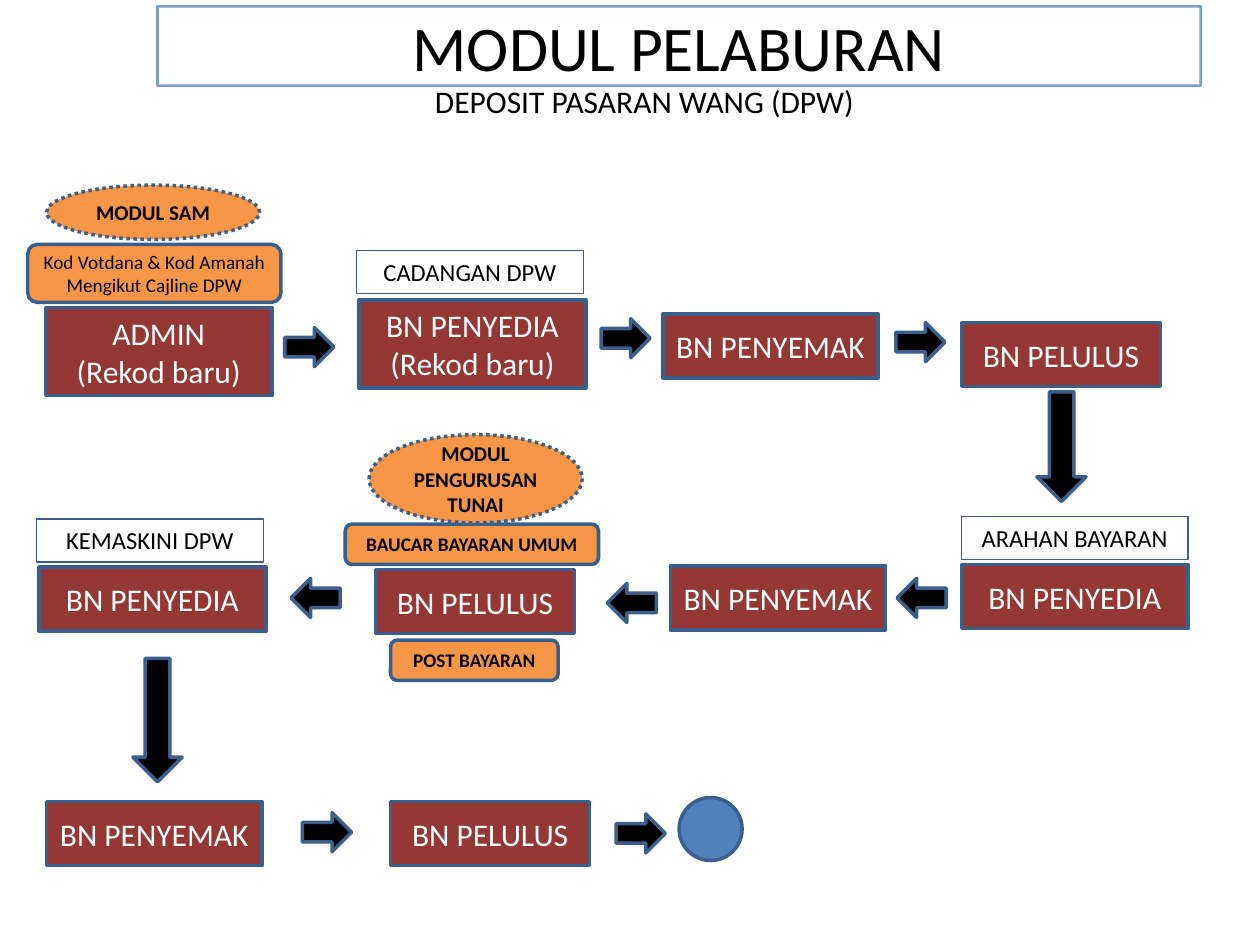
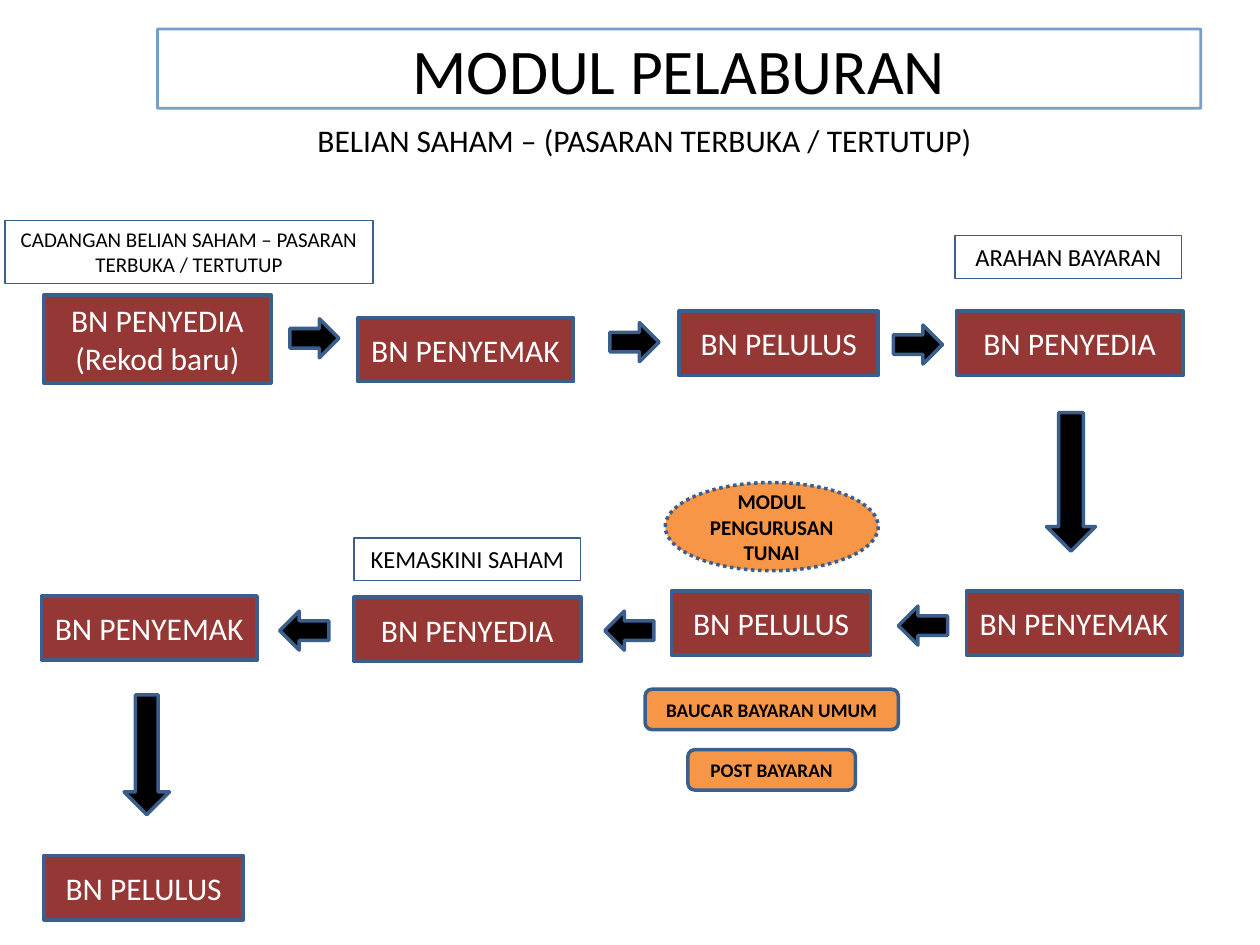
from dataclasses import dataclass

from lxml import etree
from pptx import Presentation
from pptx.dml.color import RGBColor
from pptx.enum.dml import MSO_LINE
from pptx.enum.shapes import MSO_SHAPE
from pptx.enum.text import MSO_ANCHOR, MSO_AUTO_SIZE, PP_ALIGN
from pptx.oxml.ns import qn
from pptx.util import Inches, Pt

RECTANGLE = MSO_SHAPE.RECTANGLE
ROUNDED = MSO_SHAPE.ROUNDED_RECTANGLE
OVAL = MSO_SHAPE.OVAL
RIGHT_ARROW = MSO_SHAPE.RIGHT_ARROW
CONNECTOR_DOT = MSO_SHAPE.FLOWCHART_CONNECTOR
DOTTED = MSO_LINE.ROUND_DOT
CENTER = PP_ALIGN.CENTER
TOP = MSO_ANCHOR.TOP
MIDDLE = MSO_ANCHOR.MIDDLE
NO_AUTOFIT = MSO_AUTO_SIZE.NONE
TITLE_ONLY = 5
LEFTWARD, DOWNWARD = 180, 90


@dataclass(frozen=True)
class Theme:
    font: str = "Calibri"
    ink: RGBColor = RGBColor(0, 0, 0)
    white: RGBColor = RGBColor(255, 255, 255)
    step: RGBColor = RGBColor(0x95, 0x37, 0x35)
    module: RGBColor = RGBColor(0xF7, 0x96, 0x46)
    accent: RGBColor = RGBColor(0x4F, 0x81, 0xBD)
    outline: RGBColor = RGBColor(0x3A, 0x5F, 0x8C)
    title_size: float = 36.3
    step_size: float = 18
    label_size: float = 14
    module_size: float = 12
    task_size: float = 11
    title_line: float = 1.5
    thick_line: float = 2
    thin_line: float = 0.75


THEME = Theme()
STEP_WIDTHS = {"ADMIN": 1.8, "BN PENYEDIA": 1.8, "BN PENYEMAK": 1.71, "BN PELULUS": 1.58}


def write(shape, lines, size, color=THEME.ink, bold=False, anchor=MIDDLE, side_margin=0.05):
    frame = shape.text_frame
    frame.word_wrap = True
    frame.auto_size = NO_AUTOFIT
    frame.vertical_anchor = anchor
    frame.margin_left = frame.margin_right = Inches(side_margin)
    for index, line in enumerate(lines):
        paragraph = frame.add_paragraph() if index else frame.paragraphs[0]
        paragraph.alignment = CENTER
        run = paragraph.add_run()
        run.text = line
        run.font.name = THEME.font
        run.font.size = Pt(size)
        run.font.bold = bold
        run.font.color.rgb = color


def add_figure(slide, preset, left, top, width, height, fill=None, line_width=THEME.thick_line):
    figure = slide.shapes.add_shape(preset, Inches(left), Inches(top), Inches(width), Inches(height))
    figure.shadow.inherit = False
    if fill is None:
        figure.fill.background()
    else:
        figure.fill.solid()
        figure.fill.fore_color.rgb = fill
    figure.line.color.rgb = THEME.outline
    figure.line.width = Pt(line_width)
    return figure


def add_headed_slide(deck, subject, title_top, subject_top):
    """Add a slide with the framed module title and its subject below."""
    slide = deck.slides.add_slide(deck.slide_layouts[TITLE_ONLY])
    title = slide.shapes.title
    title.left, title.top = Inches(1.25), Inches(title_top)
    title.width, title.height = Inches(8.28), Inches(0.63)
    title.line.color.rgb = THEME.accent
    title.line.width = Pt(THEME.title_line)
    line_color = title.line.fill._xPr.find(".//" + qn("a:srgbClr"))
    etree.SubElement(line_color, qn("a:alpha"), val="76000")
    write(title, ["MODUL PELABURAN"], THEME.title_size)

    subtitle = slide.shapes.add_textbox(Inches(2.42), Inches(subject_top), Inches(5.39), Inches(0.4))
    write(subtitle, [subject], THEME.step_size, anchor=TOP)
    return slide


def add_step(slide, role, left, top, note=None):
    lines = [role, note] if note else [role]
    step = add_figure(slide, RECTANGLE, left, top, STEP_WIDTHS[role], 0.7 if note else 0.51, THEME.step)
    write(step, lines, THEME.step_size, THEME.white)


def add_label(slide, text, left, top, width=1.8, height=0.34, size=THEME.label_size):
    label = add_figure(slide, RECTANGLE, left, top, width, height, line_width=THEME.thin_line)
    write(label, [text], size, anchor=TOP)


def add_module(slide, text, left, top, height=0.7):
    module = add_figure(slide, OVAL, left, top, 1.69, height, THEME.module)
    module.line.dash_style = DOTTED
    write(module, [text], THEME.module_size, bold=True, side_margin=0.1)


def add_task(slide, text, left, top, width=2.01, height=0.32, bold=True):
    task = add_figure(slide, ROUNDED, left, top, width, height, THEME.module)
    write(task, [text], THEME.task_size, bold=bold)


def add_arrow(slide, left, top, rotation=0, length=0.39, thickness=0.31):
    """Place a block arrow by its frame before rotation."""
    arrow = add_figure(slide, RIGHT_ARROW, left, top, length, thickness, THEME.ink)
    arrow.rotation = rotation


def add_arrows(slide, rightward, leftward):
    for left, top in rightward:
        add_arrow(slide, left, top)
    for left, top in leftward:
        add_arrow(slide, left, top, LEFTWARD)


def add_steps(slide, steps):
    for step in steps:
        add_step(slide, *step)


def build_money_market_deposit(deck):
    slide = add_headed_slide(deck, "DEPOSIT PASARAN WANG (DPW)", 0.05, 0.6)
    add_steps(slide, [
        ("ADMIN", 0.36, 2.44, "(Rekod baru)"),
        ("BN PENYEDIA", 2.85, 2.38, "(Rekod baru)"),
        ("BN PENYEMAK", 5.26, 2.49),
        ("BN PELULUS", 7.63, 2.56),
        ("BN PENYEDIA", 7.63, 4.48),
        ("BN PENYEMAK", 5.32, 4.49),
        ("BN PELULUS", 2.98, 4.52),
        ("BN PENYEDIA", 0.31, 4.5),
        ("BN PENYEMAK", 0.37, 6.36),
        ("BN PELULUS", 3.1, 6.36),
    ])
    add_label(slide, "CADANGAN DPW", 2.83, 1.99)
    add_label(slide, "ARAHAN BAYARAN", 7.63, 4.1)
    add_label(slide, "KEMASKINI DPW", 0.29, 4.12)
    add_task(slide, "Kod Votdana & Kod Amanah Mengikut Cajline DPW", 0.22, 1.94, height=0.46, bold=False)
    add_task(slide, "BAUCAR BAYARAN UMUM", 2.74, 4.16)
    add_task(slide, "POST BAYARAN", 3.1, 5.08, width=1.33)
    add_module(slide, "MODUL SAM", 0.37, 1.47, height=0.43)
    add_module(slide, "MODUL PENGURUSAN TUNAI", 2.93, 3.45)
    add_arrows(
        slide,
        rightward=[(2.26, 2.6), (4.77, 2.53), (7.11, 2.56), (2.4, 6.45), (4.89, 6.46)],
        leftward=[(7.12, 4.59), (4.82, 4.63), (2.31, 4.59)],
    )
    add_arrow(slide, 7.99, 3.35, DOWNWARD, length=0.87, thickness=0.39)
    add_arrow(slide, 0.76, 5.52, DOWNWARD, length=0.98, thickness=0.39)
    add_figure(slide, CONNECTOR_DOT, 5.39, 6.33, 0.5, 0.5, THEME.accent)


def build_share_purchase(deck):
    slide = add_headed_slide(deck, "BELIAN SAHAM – (PASARAN TERBUKA / TERTUTUP)", 0.23, 0.91)
    add_steps(slide, [
        ("BN PENYEDIA", 0.35, 2.34, "(Rekod baru)"),
        ("BN PENYEMAK", 2.84, 2.52),
        ("BN PELULUS", 5.39, 2.47),
        ("BN PENYEDIA", 7.59, 2.47),
        ("BN PENYEMAK", 7.67, 4.69),
        ("BN PELULUS", 5.33, 4.69),
        ("BN PENYEDIA", 2.81, 4.74),
        ("BN PENYEMAK", 0.33, 4.73),
        ("BN PELULUS", 0.35, 6.79),
    ])
    add_label(slide, "CADANGAN BELIAN SAHAM – PASARAN TERBUKA / TERTUTUP",
              0.04, 1.75, 2.92, 0.5, THEME.module_size)
    add_label(slide, "ARAHAN BAYARAN", 7.58, 1.87)
    add_label(slide, "KEMASKINI SAHAM", 2.81, 4.27)
    add_task(slide, "BAUCAR BAYARAN UMUM", 5.12, 5.47)
    add_task(slide, "POST BAYARAN", 5.46, 5.95, width=1.33)
    add_module(slide, "MODUL PENGURUSAN TUNAI", 5.28, 3.83)
    add_arrows(
        slide,
        rightward=[(2.3, 2.53), (4.84, 2.56), (7.09, 2.58)],
        leftward=[(7.13, 4.81), (4.8, 4.85), (2.22, 4.85)],
    )
    add_arrow(slide, 7.95, 3.63, DOWNWARD, length=1.1, thickness=0.39)
    add_arrow(slide, 0.69, 5.81, DOWNWARD, length=0.95, thickness=0.36)


def main():
    deck = Presentation()
    deck.slide_width, deck.slide_height = Inches(10), Inches(7.5)
    build_money_market_deposit(deck)
    build_share_purchase(deck)
    deck.save("out.pptx")


if __name__ == "__main__":
    main()
